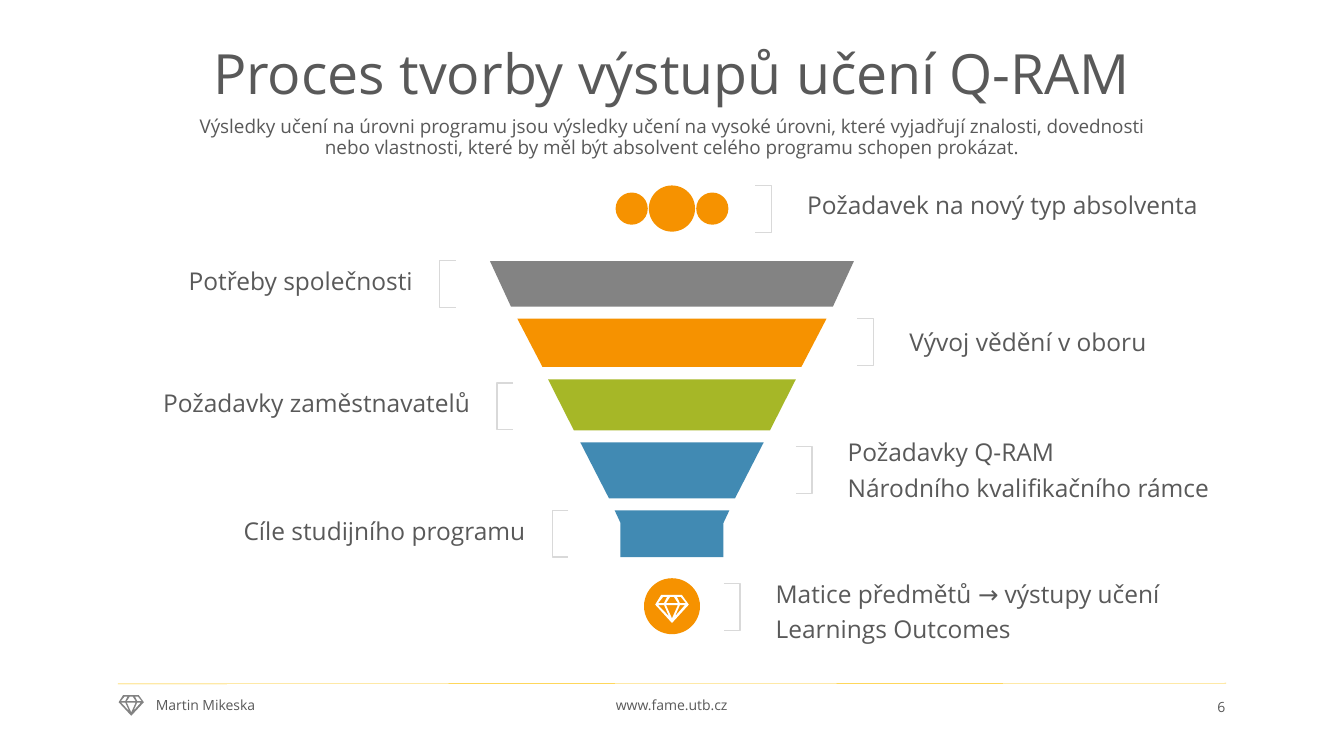
import dataclasses
import pptx
import pptx.dml.color
import pptx.enum.shapes
import pptx.enum.text
import pptx.oxml.ns
import pptx.util
import lxml.etree

Pt = pptx.util.Pt
Align = pptx.enum.text.PP_ALIGN
Anchor = pptx.enum.text.MSO_ANCHOR


@dataclasses.dataclass(frozen=True)
class Theme:
    """Colours, font and type sizes of the slide."""
    font: str = "Open Sans"
    ink: str = "595959"
    gray: str = "838383"
    pale: str = "D9D9D9"
    gold: str = "FEC306"
    orange: str = "F69200"
    green: str = "A6B727"
    blue: str = "418AB3"
    white: str = "FFFFFF"
    title: float = 39.6
    lead: float = 13.5
    label: float = 17.5
    small: float = 10


theme = Theme()

FACETS = [
    [(6, 0), (27, 0), (34, 9.5), (17, 27.5), (0, 9.5)],
    [(25, 8), (22, 2), (26, 2), (31, 8)],
    [(20, 21), (25, 10), (30, 10)],
    [(17, 23), (11, 10), (23, 10)],
    [(3, 10), (9, 10), (14, 21)],
    [(8, 2), (12, 2), (9, 8), (3, 8)],
    [(19, 2), (23, 8), (11, 8), (15, 2)],
]

TIERS = [
    (theme.gray, [(130, 0), (115, 32.5)]),
    (theme.orange, [(110.5, 41), (92.5, 75.5)]),
    (theme.green, [(88.5, 84.5), (70, 121)]),
    (theme.blue, [(65.5, 129.5), (45, 169.5)]),
    (theme.blue, [(41, 178), (36.8, 187), (36.8, 211.5)]),
]

RIGHT = [
    ((539.5, 132.5, 397, 33.5), "Požadavek na nový typ absolventa", 0.9, 32.5),
    ((612.5, 227.5, 238, 33.5), "Vývoj vědění v oboru", 1.2, 31),
    ((568.5, 319, 297, 33.5),
     "Požadavky Q-RAM\nNárodního kvalifikačního rámce", 1.2, 31),
    ((517, 417, 324, 33.5),
     "Matice předmětů → výstupy učení\nLearnings Outcomes", 1.2, 36.5),
]

LEFT = [
    ((108, 186, 217.5, 33.5), "Potřeby společnosti"),
    ((85, 273.5, 281.5, 33.5), "Požadavky zaměstnavatelů"),
    ((155, 364.5, 251, 33.5), "Cíle studijního programu"),
]


def rgb(code):
    """Return the colour of a hex code."""
    return pptx.dml.color.RGBColor.from_string(code)


def paint(shape, code):
    """Fill a shape flat, with no line or shadow."""
    shape.shadow.inherit = False
    shape.fill.solid()
    shape.fill.fore_color.rgb = rgb(code)
    shape.line.fill.background()


def write(slide, box, text, size, align=Align.LEFT, space=1.0,
          anchor=Anchor.MIDDLE, pad=True):
    """Set text in a box."""
    frame = slide.shapes.add_textbox(*map(Pt, box)).text_frame
    frame.word_wrap = True
    frame.vertical_anchor = anchor
    if not pad:
        frame.margin_left = frame.margin_right = 0
        frame.margin_top = frame.margin_bottom = 0
    frame.text = text
    for para in frame.paragraphs:
        para.alignment = align
        para.line_spacing = space
        for run in para.runs:
            run.font.name = theme.font
            run.font.size = Pt(size)
            run.font.color.rgb = rgb(theme.ink)


def trace(slide, loops, close=True):
    """Draw an outline from one or more loops of points."""
    loops = [[(Pt(x), Pt(y)) for x, y in loop] for loop in loops]
    pen = slide.shapes.build_freeform(*loops[0][0])
    pen.add_line_segments(loops[0][1:], close=close)
    for loop in loops[1:]:
        pen.move_to(*loop[0])
        pen.add_line_segments(loop[1:], close=close)
    return pen.convert_to_shape()


def disc(slide, x, y, size):
    """Draw an orange disc around a centre."""
    oval = pptx.enum.shapes.MSO_SHAPE.OVAL
    box = (x - size / 2, y - size / 2, size, size)
    paint(slide.shapes.add_shape(oval, *map(Pt, box)), theme.orange)


def gem(slide, box, code):
    """Draw the gem icon to the width of its box."""
    x, y, w, h = box
    loops = [[(x + w * a / 34, y + h * b / 27.5) for a, b in loop]
             for loop in FACETS]
    paint(trace(slide, loops), code)


def head(slide, box):
    """Place the title and the lead below it."""
    x, y, w, h = box
    write(slide, (x, y, w, 53.5), "Proces tvorby výstupů učení Q-RAM",
          theme.title, Align.CENTER, 0.9)
    write(slide, (x + 1, y + 47, w - 2, h - 47),
          "Výsledky učení na úrovni programu jsou výsledky učení na vysoké "
          "úrovni, které vyjadřují znalosti, dovednosti nebo vlastnosti, "
          "které by měl být absolvent celého programu schopen prokázat.",
          theme.lead, Align.CENTER, 0.9)


def funnel(slide, box):
    """Stack the tiers about the middle of the box."""
    x, y, w, h = box
    mid = x + w / 2
    for code, edge in TIERS:
        right = [(mid + half, y + down) for half, down in edge]
        left = [(mid - half, y + down) for half, down in reversed(edge)]
        paint(trace(slide, [right + left]), code)


def dots(slide, box):
    """Place three discs in a row, the middle one larger."""
    x, y, w, h = box
    for step, size in ((-1, 23), (0, h), (1, 23)):
        disc(slide, x + w / 2 + step * 28.8, y + h / 2, size)


def badge(slide, box):
    """Place the gem on its disc."""
    x, y, w, h = box
    disc(slide, x + w / 2, y + h / 2, w)
    gem(slide, (x + 8, y + 12, w - 16, 20), theme.white)


def note(slide, box, text, space=1.0, tall=31, left=False):
    """Place a label beside a bracket at one end of the box."""
    x, y, w, h = box
    span = 11.5
    back, tip = (x + w - span, x + w) if left else (x + span, x)
    mark = trace(slide, [[(tip, y), (back, y), (back, y + h), (tip, y + h)]],
                 close=False)
    mark.shadow.inherit = False
    mark.fill.background()
    mark.line.color.rgb = rgb(theme.pale)
    mark.line.width = Pt(1)
    area = ((x, y - 1, w - span - 19, tall) if left
            else (x + 37, y - 1, w - 37, tall))
    write(slide, area, text, theme.label,
          Align.RIGHT if left else Align.LEFT, space, pad=False)


def foot(slide, box):
    """Place the rule, icon, name, address and page number."""
    x, y, w, h = box
    kind = pptx.enum.shapes.MSO_CONNECTOR.STRAIGHT
    rule = slide.shapes.add_connector(
        kind, Pt(x), Pt(y + 0.5), Pt(x + w), Pt(y))
    rule.line.color.rgb = rgb(theme.gold)
    rule.line.width = Pt(0.25)
    lxml.etree.SubElement(rule._element.spPr,
                          pptx.oxml.ns.qn("a:effectLst"))
    gem(slide, (x + 0.5, y + 8.5, 18, 14.8), theme.gray)
    write(slide, (x + 20, y + 7, 155.5, 19), "Martin Mikeska",
          theme.small, space=0.9, anchor=Anchor.TOP)
    write(slide, (x + w / 2 - 78, y + 7, 155.5, 19), "www.fame.utb.cz",
          theme.small, Align.CENTER, 0.9, Anchor.TOP)
    write(slide, (x + w - 86.5, y + 8, 93, 18), "6", theme.small, Align.RIGHT)


def main():
    """Build the slide and save it."""
    deck = pptx.Presentation()
    deck.slide_width, deck.slide_height = Pt(960), Pt(540)
    slide = deck.slides.add_slide(deck.slide_layouts[6])
    foot(slide, (84.25, 488, 791.5, 28))
    head(slide, (119, 28, 722, 94))
    for box, text, space, tall in RIGHT:
        note(slide, box, text, space, tall)
    for box, text in LEFT:
        note(slide, box, text, left=True)
    funnel(slide, (350, 186.5, 260, 211.5))
    badge(slide, (460, 413, 40, 40))
    dots(slide, (439.7, 132.5, 80.6, 33))
    deck.save("out.pptx")


if __name__ == "__main__":
    main()
